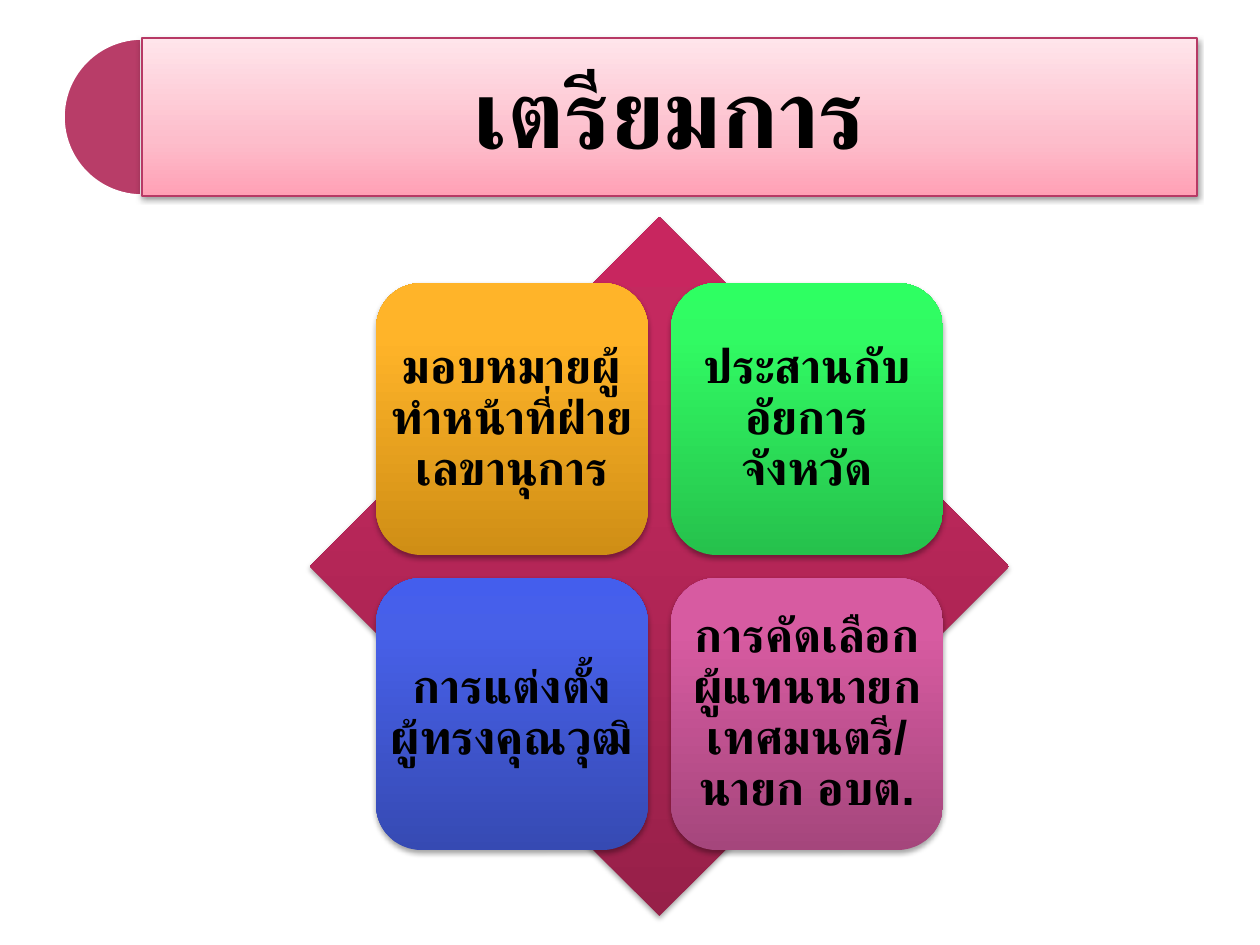
from copy import deepcopy

from lxml import etree
from pptx import Presentation
from pptx import util as u
from pptx.dml import color
from pptx.enum import lang, shapes, text
from pptx.oxml import ns

SCALE = 914400 / 126
FONT = "Arial"
TITLE = "เตรียมการ"
TITLE_STOPS = [(0, "FFA0B5"), (35, "FDBDCB"), (100, "FFE5EB")]
DIAMOND_STOPS = [(0, "972049"), (80, "C4295F"), (100, "C8265F")]
CARDS = [
    ("มอบหมายผู้ทำหน้าที่ฝ่ายเลขานุการ", ("CF8E15", "FFB429", "FFB52B")),
    ("ประสานกับอัยการจังหวัด", ("26C14C", "31FA63", "2EFF62")),
    ("การแต่งตั้งผู้ทรงคุณวุฒิ", ("364AB3", "4760E8", "445EED")),
    ("การคัดเลือกผู้แทนนายกเทศมนตรี/นายก อบต.", ("A5467C", "D75BA1", "DA59A2")),
]


def px(length):
    return u.Emu(round(length * SCALE))


def rgb(value):
    return color.RGBColor.from_string(value)


def assign(target, values):
    for name, value in values.items():
        setattr(target, name, value)


def add_shape(page, kind, box):
    shape = page.shapes.add_shape(kind, *map(px, box))
    shape.shadow.inherit = False
    shape.line.fill.background()
    return shape


def fill_gradient(shape, stops):
    shape.fill.gradient()
    shape.fill.gradient_angle = 90
    stop_list = shape.fill._xPr.find(".//" + ns.qn("a:gsLst"))
    while len(stop_list) < len(stops):
        stop_list.append(deepcopy(stop_list[-1]))
    for stop, (percent, value) in zip(shape.fill.gradient_stops, stops):
        stop.position = percent / 100
        stop.color.rgb = rgb(value)


def add_shadow(shape, distance, alpha):
    effects = shape._element.spPr.find(ns.qn("a:effectLst"))
    shadow = etree.SubElement(
        effects, ns.qn("a:outerShdw"), blurRad=str(u.Pt(3.1)),
        dist=str(u.Pt(distance)), dir="5400000", rotWithShape="0")
    black = etree.SubElement(shadow, ns.qn("a:srgbClr"), val="000000")
    etree.SubElement(black, ns.qn("a:alpha"), val=str(alpha * 1000))


def write_text(shape, words, size, inset):
    frame = shape.text_frame
    sides = ("left", "top", "right", "bottom")
    assign(frame, {f"margin_{side}": px(inset) for side in sides})
    assign(frame, {"word_wrap": True, "vertical_anchor": text.MSO_ANCHOR.MIDDLE})
    para = frame.paragraphs[0]
    assign(para, {"alignment": text.PP_ALIGN.CENTER, "line_spacing": 0.9})
    span = para.add_run()
    span.text = words
    assign(span.font, {"name": FONT, "size": u.Pt(size), "bold": True,
                       "language_id": lang.MSO_LANGUAGE_ID.THAI})
    span.font.color.rgb = rgb("000000")
    etree.SubElement(span.font._element, ns.qn("a:cs"), typeface=FONT)


def add_title(page, box):
    left, top, width, height = box
    pie = add_shape(page, shapes.MSO_SHAPE.PIE, (left, top, height, height))
    pie.adjustments[0], pie.adjustments[1] = 54, 162
    pie.fill.solid()
    pie.fill.fore_color.rgb = rgb("B83D68")
    pie.line.color.rgb = rgb("FFFFFF")
    pie.line.width = u.Pt(2)

    radius = height // 2
    banner = add_shape(page, shapes.MSO_SHAPE.RECTANGLE,
                       (left + radius, top, width - radius, height))
    fill_gradient(banner, TITLE_STOPS)
    banner.line.color.rgb = rgb("B73965")
    banner.line.width = u.Pt(0.75)
    add_shadow(banner, 1.6, 38)
    write_text(banner, TITLE, 55, 29)


def add_matrix(page, box):
    left, top, size, _ = box
    diamond = add_shape(page, shapes.MSO_SHAPE.DIAMOND, box)
    fill_gradient(diamond, DIAMOND_STOPS)
    add_shadow(diamond, 1.8, 35)

    side = size * 39 // 100
    margin = size * 95 // 1000
    step = size - 2 * margin - side
    for index, (words, tones) in enumerate(CARDS):
        row, column = divmod(index, 2)
        card = add_shape(page, shapes.MSO_SHAPE.ROUNDED_RECTANGLE,
                         (left + margin + column * step,
                          top + margin + row * step, side, side))
        fill_gradient(card, list(zip((0, 80, 100), tones)))
        add_shadow(card, 1.8, 35)
        write_text(card, words, 27, 0)


def main():
    deck = Presentation()
    assign(deck, {"slide_width": px(1260), "slide_height": px(945)})
    page = deck.slides.add_slide(deck.slide_layouts[6])
    add_title(page, (63, 38, 1134, 158))
    add_matrix(page, (310, 217, 699, 699))
    deck.save("out.pptx")


if __name__ == "__main__":
    main()
